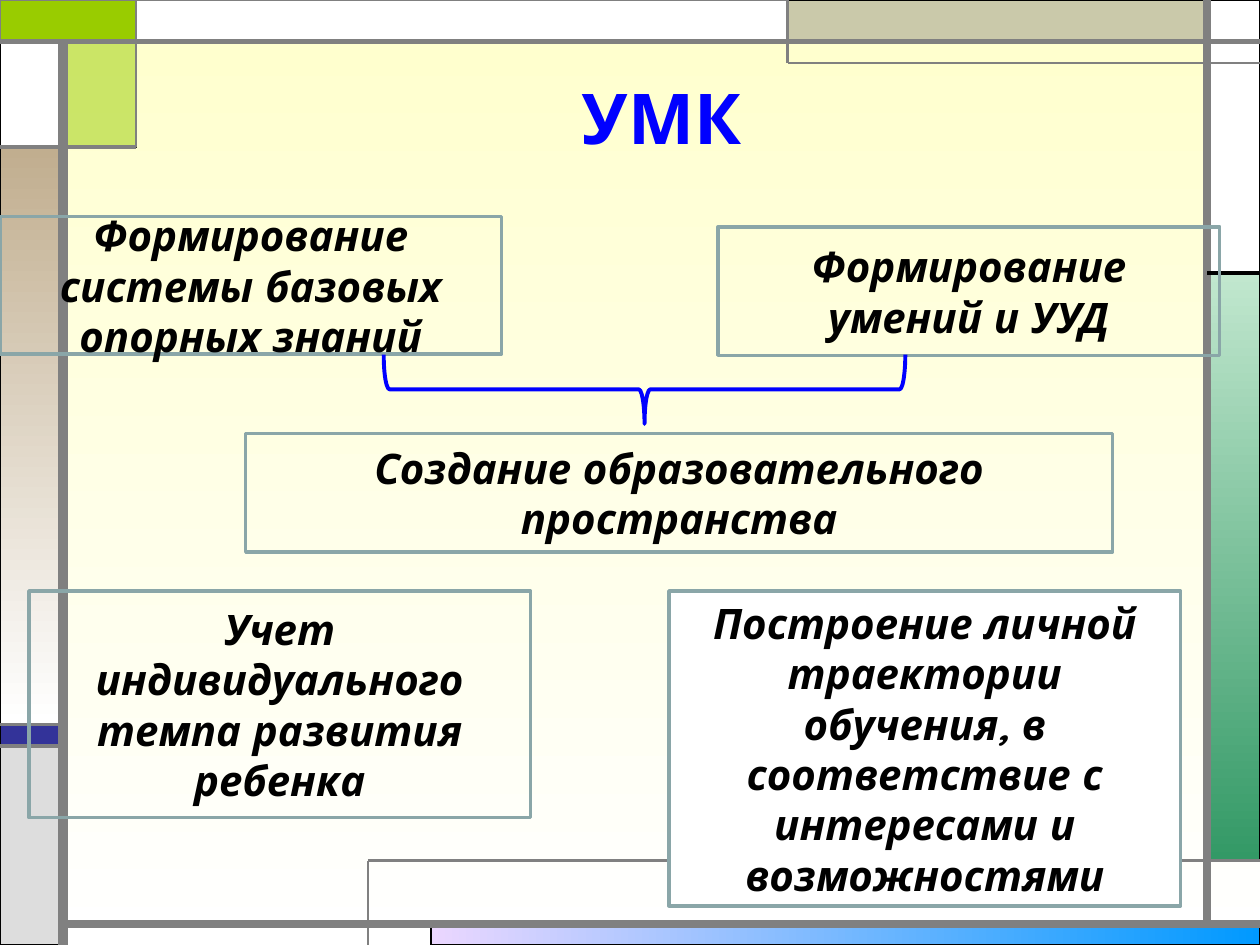
from lxml.etree import SubElement
from pptx import Presentation
from pptx.dml.color import RGBColor
from pptx.enum.shapes import MSO_CONNECTOR as Connector, MSO_SHAPE as Shape
from pptx.enum.text import MSO_ANCHOR as Anchor, PP_ALIGN as Align
from pptx.oxml.ns import qn
from pptx.util import Inches, Pt

FONT = "Quicksand"
GRAY, BLACK, WHITE = "808080", "000000", "FFFFFF"
BLUE, TEAL, LIME = "0000FF", "8AA6A8", "99CC00"
LEFT_RAIL, RIGHT_RAIL, TOP_RAIL, BOTTOM_RAIL = 0.5, 9.58, 0.33, 7.33
CORNER_X, CORNER_Y, TAB_X, STEP_X, STEP_Y = 1.08, 1.17, 6.25, 2.92, 6.83
BAND_TOP, BAND_BOTTOM, GREEN_TOP = 5.75, 5.92, 2.17

PANELS = [
    (2.92 + 0.5, BOTTOM_RAIL, 10, 7.5, ("EBD7FF", "0099FF", 0), BLACK, 0.75),
    (RIGHT_RAIL, GREEN_TOP, 10, STEP_Y, ("C1E7CE", "339966", 90), BLACK, 0.75),
    (0, BAND_TOP, LEFT_RAIL, BAND_BOTTOM, "333399", BLACK, 0.75),
    (0, BAND_BOTTOM, LEFT_RAIL, 7.5, "DDDDDD", BLACK, 0.75),
    (RIGHT_RAIL, 0, 10, GREEN_TOP, WHITE, BLACK, 0.75),
    (TAB_X, 0, RIGHT_RAIL, TOP_RAIL, "CAC9AA", BLACK, 0.75),
    (LEFT_RAIL, TOP_RAIL, CORNER_X, CORNER_Y, LIME, BLACK, 0.75),
    (0, CORNER_Y, LEFT_RAIL, BAND_TOP, ("C1AE8F", WHITE, 90), BLACK, 0.75),
    (0, TOP_RAIL, LEFT_RAIL, CORNER_Y, WHITE, BLACK, 0.75),
    (0, 0, CORNER_X, TOP_RAIL, LIME, GRAY, 1.5),
    (CORNER_X, 0, TAB_X, TOP_RAIL, WHITE, GRAY, 0.75),
]

RULES = [
    (LEFT_RAIL, 7.5, LEFT_RAIL, TOP_RAIL, GRAY, 6),
    (LEFT_RAIL, BOTTOM_RAIL, 10, BOTTOM_RAIL, GRAY, 4.5),
    (RIGHT_RAIL, BOTTOM_RAIL, RIGHT_RAIL, 0, GRAY, 4.5),
    (0, TOP_RAIL, 10, TOP_RAIL, GRAY, 3),
    (10, 0.5, TAB_X, 0.5, GRAY, 1.5),
    (TAB_X, 0.5, TAB_X, 0, GRAY, 1.5),
    (RIGHT_RAIL, GREEN_TOP, 10, GREEN_TOP, BLACK, 2.25),
    (CORNER_X, 0, CORNER_X, CORNER_Y, GRAY, 1.5),
    (CORNER_X, CORNER_Y, 0, CORNER_Y, GRAY, 2.25),
    (STEP_X, 7.5, STEP_X, STEP_Y, GRAY, 1.5),
    (STEP_X, STEP_Y, 10, STEP_Y, GRAY, 1.5),
    (LEFT_RAIL, BAND_TOP, 0, BAND_TOP, GRAY, 2.25),
    (LEFT_RAIL, BAND_BOTTOM, 0, BAND_BOTTOM, GRAY, 2.25),
]

UPPER_STATEMENTS = [
    ("Формирование системы базовых опорных знаний", 0, 1.72, 3.98, 1.09, None),
    ("Формирование умений и УУД", 5.7, 1.8, 3.98, 1.02, None),
    ("Создание образовательного пространства", 1.95, 3.44, 6.88, 0.94, None),
]
LOWER_STATEMENTS = [
    ("Учет индивидуального темпа развития ребенка", 0.23, 4.69, 3.98, 1.8, None),
    ("Построение личной траектории обучения, в соответствие с интересами "
     "и возможностями", 5.31, 4.69, 4.06, 2.5, WHITE),
]


def color(hex_value):
    return RGBColor.from_string(hex_value)


def paint_gradient(fill, start, end, clockwise):
    fill.gradient()
    fill.gradient_angle = -clockwise % 360
    for stop, hex_value in zip(fill.gradient_stops, (start, end)):
        stop.color.rgb = color(hex_value)


def paint(fill, paint_spec):
    if paint_spec is None:
        fill.background()
    elif isinstance(paint_spec, tuple):
        paint_gradient(fill, *paint_spec)
    else:
        fill.solid()
        fill.fore_color.rgb = color(paint_spec)


def set_line(line, hex_value, points):
    line.color.rgb = color(hex_value)
    line.width = Pt(points)


def add_outlined(slide, preset, left, top, width, height, fill, outline, points):
    outlined = slide.shapes.add_shape(
        preset, Inches(left), Inches(top), Inches(width), Inches(height))
    outlined.shadow.inherit = False
    paint(outlined.fill, fill)
    set_line(outlined.line, outline, points)
    return outlined


def add_panel(slide, left, top, right, bottom, fill, outline, points):
    return add_outlined(slide, Shape.RECTANGLE, left, top, right - left,
                        bottom - top, fill, outline, points)


def make_half_transparent(panel):
    tint = panel._element.spPr.find(qn("a:solidFill"))[0]
    SubElement(tint, qn("a:alpha"), val="50000")


def add_rule(slide, x1, y1, x2, y2, hex_value, points):
    rule = slide.shapes.add_connector(
        Connector.STRAIGHT, Inches(x1), Inches(y1), Inches(x2), Inches(y2))
    set_line(rule.line, hex_value, points)
    SubElement(rule._element.spPr, qn("a:effectLst"))


def write_centered(frame, wording, size, hex_value, italic):
    frame.text = wording
    frame.word_wrap = True
    frame.vertical_anchor = Anchor.MIDDLE
    paragraph = frame.paragraphs[0]
    paragraph.alignment = Align.CENTER
    font = paragraph.runs[0].font
    font.name, font.size = FONT, Pt(size)
    font.bold, font.italic = True, italic
    font.color.rgb = color(hex_value)


def add_statement(slide, wording, left, top, width, height, fill):
    statement = add_outlined(slide, Shape.RECTANGLE, left, top, width, height,
                             fill, TEAL, 2)
    write_centered(statement.text_frame, wording, 24, BLACK, True)


def add_title(slide, wording):
    title = slide.shapes.title
    title.left, title.top = Inches(1), Inches(0.3)
    title.width, title.height = Inches(8.5), Inches(1.25)
    write_centered(title.text_frame, wording, 40, BLUE, False)


def main():
    deck = Presentation()
    deck.slide_width, deck.slide_height = Inches(10), Inches(7.5)
    slide = deck.slides.add_slide(deck.slide_layouts[5])
    paint(slide.background.fill, ("FFFFCC", WHITE, 90))

    for panel_spec in PANELS:
        panel = add_panel(slide, *panel_spec)
        if panel_spec[:2] == (LEFT_RAIL, TOP_RAIL):
            make_half_transparent(panel)
    for rule_spec in RULES:
        add_rule(slide, *rule_spec)

    add_title(slide, "УМК")
    for statement_spec in UPPER_STATEMENTS:
        add_statement(slide, *statement_spec)
    brace = add_outlined(slide, Shape.RIGHT_BRACE, 4.84, 1.02, 0.55, 4.14,
                         None, BLUE, 2.25)
    brace.rotation = 90
    for statement_spec in LOWER_STATEMENTS:
        add_statement(slide, *statement_spec)

    deck.save("out.pptx")


if __name__ == "__main__":
    main()
